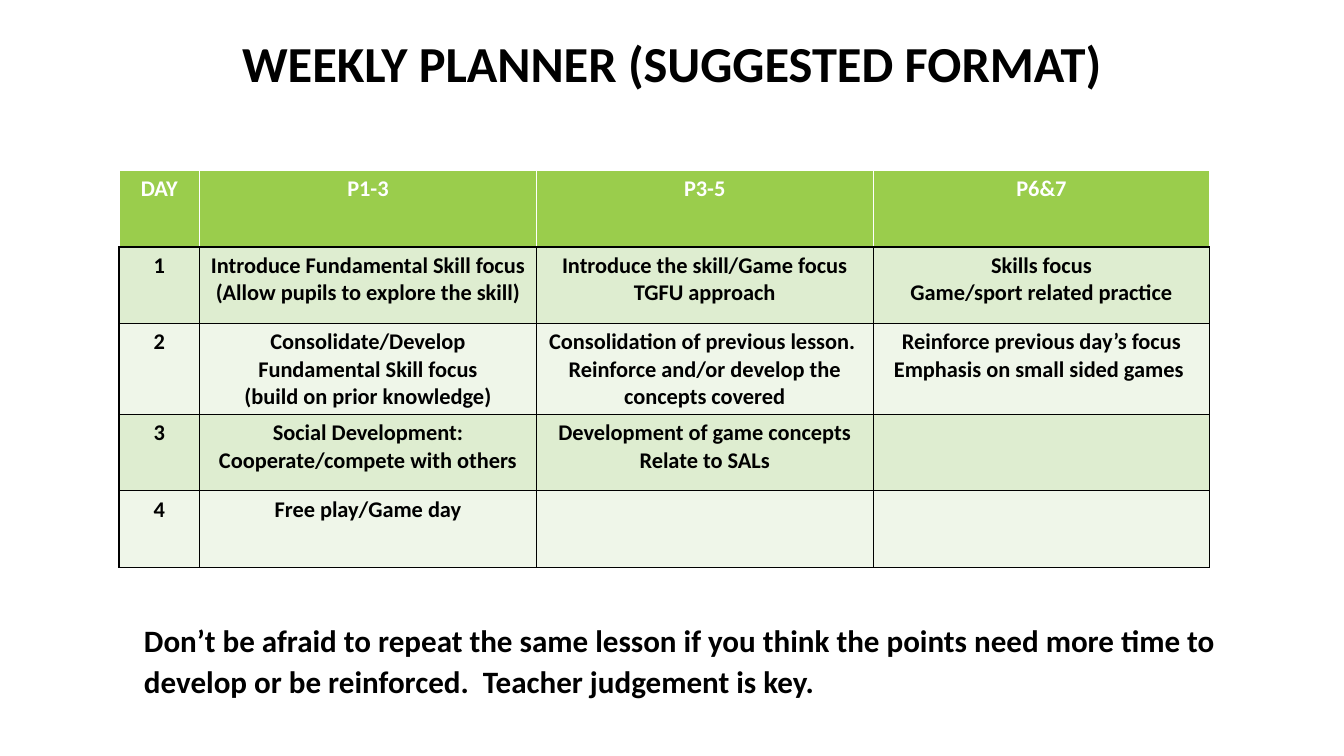
from lxml import etree
from pptx import Presentation
from pptx.dml.color import RGBColor
from pptx.enum.text import MSO_ANCHOR, PP_ALIGN
from pptx.oxml.ns import qn
from pptx.util import Inches, Pt

COLORS = {
    "black": "000000",
    "white": "FFFFFF",
    "header": "9ACD4C",
    "odd": "DEEDD0",
    "even": "EFF6E9",
}
COLUMN_WIDTHS = [0.8, 3.34, 3.34, 3.34]
ROW_HEIGHT = 0.76
# A line break inside an entry starts a new paragraph
PLAN = [
    ["DAY", "P1-3", "P3-5", "P6&7"],
    ["1",
     "Introduce Fundamental Skill focus\n(Allow pupils to explore the skill)",
     "Introduce the skill/Game focus\nTGFU approach",
     "Skills focus\nGame/sport related practice"],
    ["2",
     "Consolidate/Develop Fundamental Skill focus\n(build on prior knowledge)",
     "Consolidation of previous lesson.  Reinforce and/or develop the concepts covered",
     "Reinforce previous day’s focus\nEmphasis on small sided games "],
    ["3",
     "Social Development: Cooperate/compete with others",
     "Development of game concepts\nRelate to SALs",
     ""],
    ["4", "Free play/Game day", "", ""],
]


def rgb(name):
    return RGBColor.from_string(COLORS[name])


def style_paragraph(p, size, color="black", align=PP_ALIGN.LEFT):
    p.alignment = align
    p.font.name = "Calibri"
    p.font.size = Pt(size)
    p.font.bold = True
    p.font.color.rgb = rgb(color)


def add_text(s, text, left, top, width, height, size, spacing,
             align=PP_ALIGN.LEFT, anchor=MSO_ANCHOR.TOP):
    box = s.shapes.add_textbox(Inches(left), Inches(top), Inches(width), Inches(height))
    tf = box.text_frame
    tf.word_wrap = True
    tf.vertical_anchor = anchor
    p = tf.paragraphs[0]
    p.text = text
    p.line_spacing = spacing
    style_paragraph(p, size, align=align)


def set_borders(cell, colors):
    """Draw 1 pt borders, given as a colour name for each side."""
    props = cell._tc.get_or_add_tcPr()
    for i, side in enumerate(("L", "R", "T", "B")):
        ln = etree.Element(qn(f"a:ln{side}"), w=str(Pt(1)))
        fill = etree.SubElement(ln, qn("a:solidFill"))
        etree.SubElement(fill, qn("a:srgbClr"), val=COLORS[colors[side]])
        props.insert(i, ln)


def fill_cell(cell, text, is_header, fill):
    cell.fill.solid()
    cell.fill.fore_color.rgb = rgb(fill)
    cell.text = text
    for p in cell.text_frame.paragraphs:
        style_paragraph(p, 16, "white" if is_header else "black", PP_ALIGN.CENTER)
    borders = dict.fromkeys("LRTB", "white" if is_header else "black")
    borders["B"] = "black"
    set_borders(cell, borders)


def add_planner(s, left, top):
    table = s.shapes.add_table(
        len(PLAN), len(COLUMN_WIDTHS), Inches(left), Inches(top),
        Inches(sum(COLUMN_WIDTHS)), Inches(ROW_HEIGHT * len(PLAN))).table
    for column, width in zip(table.columns, COLUMN_WIDTHS):
        column.width = Inches(width)
    for r, entries in enumerate(PLAN):
        table.rows[r].height = Inches(ROW_HEIGHT)
        fill = "header" if r == 0 else "odd" if r % 2 else "even"
        for c, text in enumerate(entries):
            fill_cell(table.cell(r, c), text, r == 0, fill)


def main():
    prs = Presentation()
    prs.slide_width, prs.slide_height = Inches(13.33), Inches(7.5)
    s = prs.slides.add_slide(prs.slide_layouts[6])

    # Title
    add_text(s, "WEEKLY PLANNER (SUGGESTED FORMAT)", 1.25, 0.06, 10.83, 1.19,
             36, 0.9, PP_ALIGN.CENTER, MSO_ANCHOR.MIDDLE)

    # Weekly table
    add_planner(s, 1.18, 1.69)

    # Advice below the table
    add_text(s, "Don’t be afraid to repeat the same lesson if you think the points "
             "need more time to develop or be reinforced.  Teacher judgement is key.",
             1.33, 6.08, 10.83, 0.92, 22.2, 1.1)

    prs.save("out.pptx")


if __name__ == "__main__":
    main()
